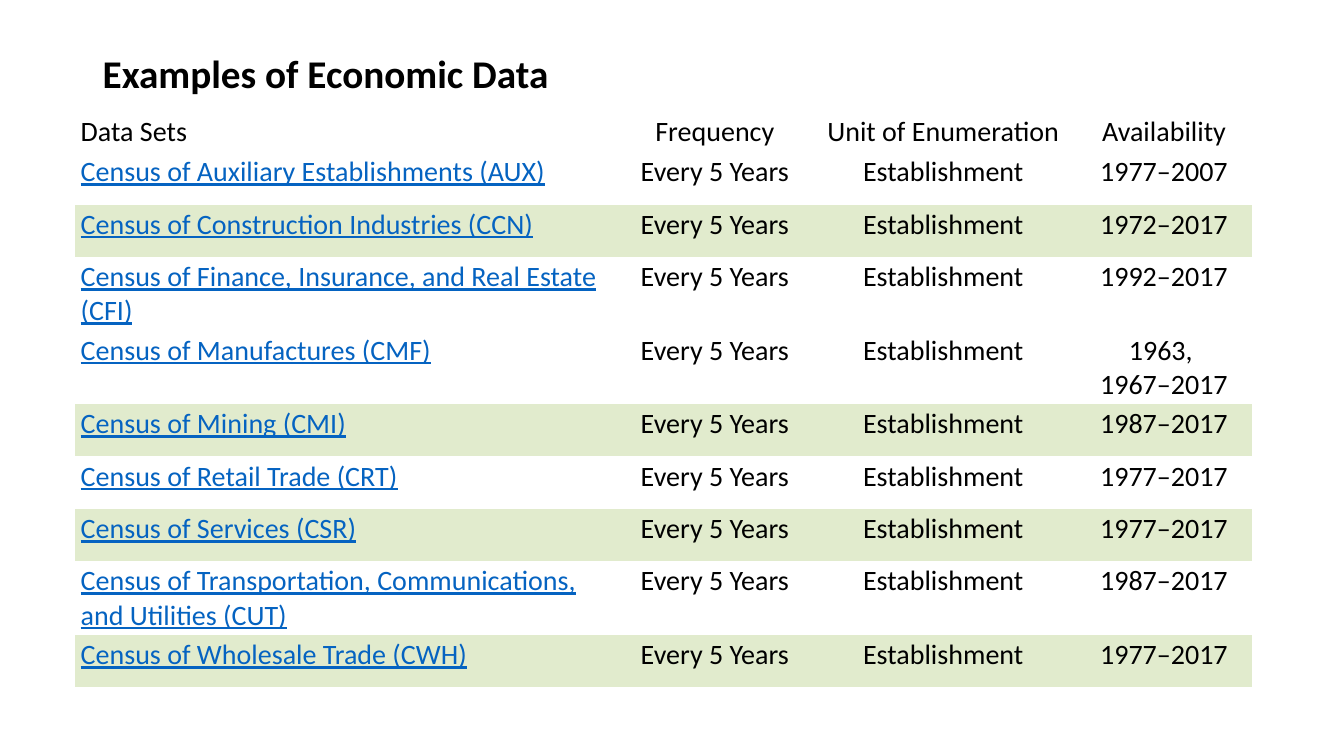
import pptx
import pptx.dml.color
import pptx.enum.text
import pptx.util

THEME = {
    "font": "Calibri",
    "title_size": pptx.util.Pt(28),
    "table_size": pptx.util.Pt(20),
    "text": pptx.dml.color.RGBColor.from_string("000000"),
    "link": pptx.dml.color.RGBColor.from_string("0563C1"),
    "plain": pptx.dml.color.RGBColor.from_string("FFFFFF"),
    "band": pptx.dml.color.RGBColor.from_string("E1EBCD"),
}
NO_STYLE = "{2D5ABB26-0587-4C30-8999-92F81FD0307C}"
Inches = pptx.util.Inches

HEADINGS = ("Data Sets", "Frequency", "Unit of Enumeration", "Availability")
CENSUSES = [
    ("Auxiliary Establishments (AUX)", "1977–2007"),
    ("Construction Industries (CCN)", "1972–2017"),
    ("Finance, Insurance, and Real Estate (CFI)", "1992–2017"),
    ("Manufactures (CMF)", "1963, \v1967–2017"),
    ("Mining (CMI)", "1987–2017"),
    ("Retail Trade (CRT)", "1977–2017"),
    ("Services (CSR)", "1977–2017"),
    ("Transportation, Communications, and Utilities (CUT)", "1987–2017"),
    ("Wholesale Trade (CWH)", "1977–2017"),
]
BANDED_ROWS = {2, 5, 7, 9}
TWO_LINE_ROWS = {3, 4, 8}
COLUMN_WIDTHS = (5.4, 1.9, 2.63, 1.75)
HEADING_HEIGHT, ROW_HEIGHT, TWO_LINE_HEIGHT = 0.4, 0.52, 0.73


def style_paragraph(paragraph, size, color):
    paragraph.font.name = THEME["font"]
    paragraph.font.size = size
    paragraph.font.color.rgb = color


presentation = pptx.Presentation()
presentation.slide_width = Inches(13.33)
presentation.slide_height = Inches(7.5)
slide = presentation.slides.add_slide(presentation.slide_layouts[6])

title = slide.shapes.add_textbox(Inches(0.92), Inches(0.4), Inches(10.91), Inches(0.71))
title.text_frame.word_wrap = True
title.text_frame.vertical_anchor = pptx.enum.text.MSO_ANCHOR.MIDDLE
paragraph = title.text_frame.paragraphs[0]
paragraph.text = "Examples of Economic Data"
paragraph.line_spacing = 0.9
paragraph.font.bold = True
style_paragraph(paragraph, THEME["title_size"], THEME["text"])

rows = [HEADINGS] + [
    (f"Census of {name}", "Every 5 Years", "Establishment", years)
    for name, years in CENSUSES
]
heights = [HEADING_HEIGHT] + [
    TWO_LINE_HEIGHT if number in TWO_LINE_ROWS else ROW_HEIGHT
    for number in range(1, len(rows))
]
table = slide.shapes.add_table(
    len(rows), len(HEADINGS), Inches(0.74), Inches(1.11),
    Inches(sum(COLUMN_WIDTHS)), Inches(sum(heights)),
).table
table.first_row = False
table.horz_banding = False
table._tbl.tblPr.find(pptx.oxml.ns.qn("a:tableStyleId")).text = NO_STYLE

for column, width in zip(table.columns, COLUMN_WIDTHS):
    column.width = Inches(width)

for row_number, (values, height) in enumerate(zip(rows, heights)):
    table.rows[row_number].height = Inches(height)
    for column_number, value in enumerate(values):
        cell = table.cell(row_number, column_number)
        cell.margin_left = cell.margin_right = Inches(0.06)
        cell.margin_top = cell.margin_bottom = Inches(0.03)
        cell.fill.solid()
        cell.fill.fore_color.rgb = THEME["band" if row_number in BANDED_ROWS else "plain"]
        paragraph = cell.text_frame.paragraphs[0]
        paragraph.text = value
        is_link = row_number > 0 and column_number == 0
        style_paragraph(paragraph, THEME["table_size"], THEME["link" if is_link else "text"])
        paragraph.font.underline = is_link
        if column_number > 0:
            paragraph.alignment = pptx.enum.text.PP_ALIGN.CENTER

presentation.save("out.pptx")
